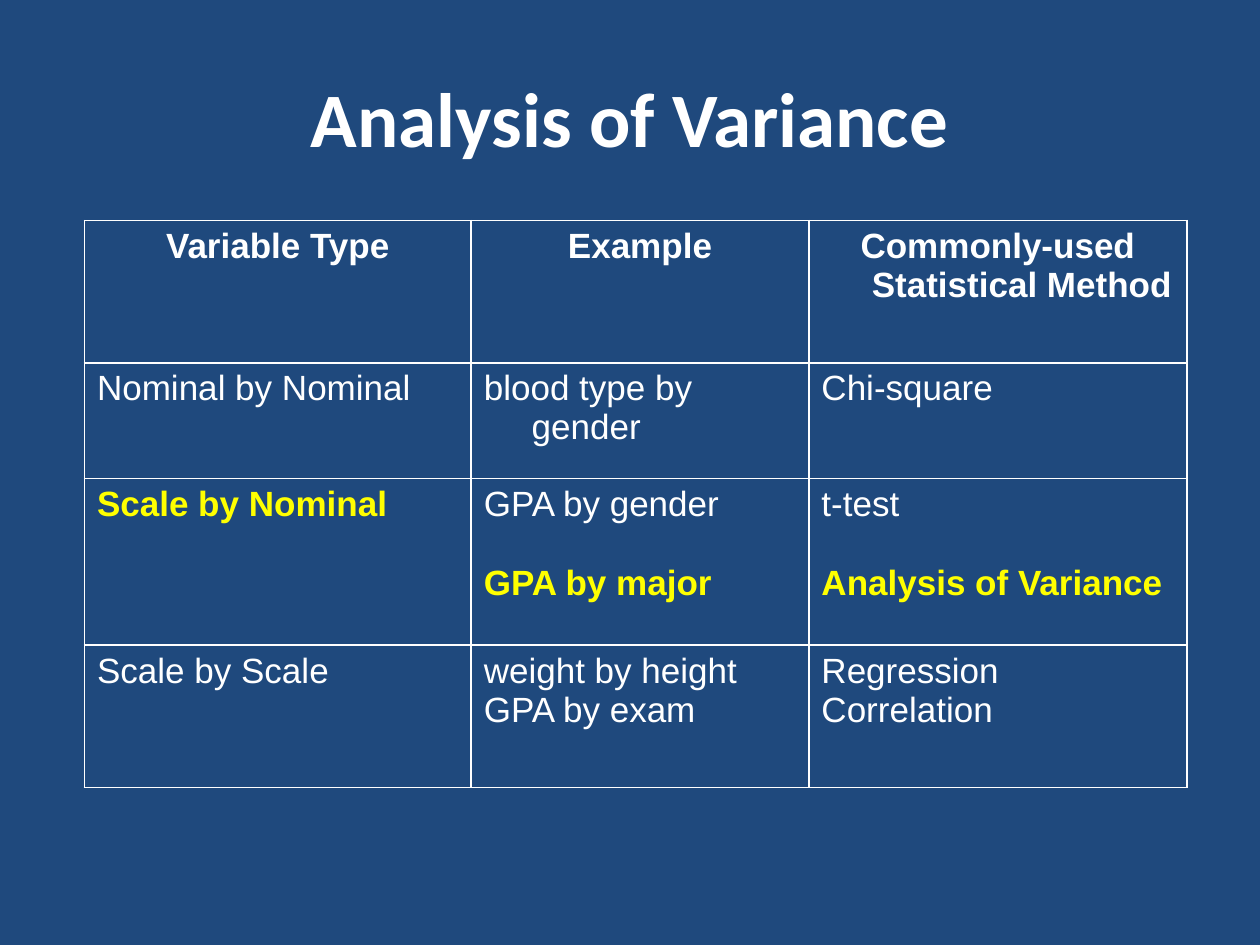
"""Build a slide that matches variable types to statistical methods."""
import dataclasses

import lxml.etree
import pptx
import pptx.dml.color
import pptx.enum.text
import pptx.oxml.ns
import pptx.util

WIDE, HIGH = 10, 7.5
WHITE, GOLD, NAVY = "FFFFFF", "FFFF00", "1F497D"
COLS = (3.07, 2.68, 3)
ROWS = (1.13, 0.92, 1.32, 1.13)
ALIGN = pptx.enum.text.PP_ALIGN


@dataclasses.dataclass
class Line:
    """One paragraph of a table cell."""
    text: str
    hot: bool = False
    gap: float = 0


GRID = (
    ((Line("Variable Type"),), (Line("Example"),),
     (Line("Commonly-used Statistical Method"),)),
    ((Line("Nominal by Nominal"),), (Line("blood type by gender"),),
     (Line("Chi-square"),)),
    ((Line("Scale by Nominal", hot=True),),
     (Line("GPA by gender"), Line("GPA by major", hot=True, gap=22.5)),
     (Line("t-test"), Line("Analysis of Variance", hot=True, gap=22.5))),
    ((Line("Scale by Scale"),),
     (Line("weight by height"), Line("GPA by exam")),
     (Line("Regression"), Line("Correlation"))),
)


def tint(code: str) -> pptx.dml.color.RGBColor:
    """Turn a hex string into a colour."""
    return pptx.dml.color.RGBColor.from_string(code)


def write(para, text: str, *, size: float = 20, font: str = "Arial",
          color: str = WHITE, bold: bool = False, align=ALIGN.LEFT,
          gap: float = 0, hang: float = 0) -> None:
    """Put formatted text in a paragraph."""
    run = para.add_run()
    run.text = text
    run.font.size = pptx.util.Pt(size)
    run.font.name = font
    run.font.bold = bold
    run.font.color.rgb = tint(color)
    para.alignment = align
    para.space_before = pptx.util.Pt(gap)
    props = para._p.get_or_add_pPr()
    props.set("marL", str(pptx.util.Inches(hang)))
    props.set("indent", str(-pptx.util.Inches(hang)))


def edge(cell, color: str, width: float) -> None:
    """Draw a line on all four sides of a cell."""
    name = pptx.oxml.ns.qn
    props = cell._tc.get_or_add_tcPr()
    for spot, side in enumerate(("lnL", "lnR", "lnT", "lnB")):
        line = lxml.etree.Element(name(f"a:{side}"), w=str(pptx.util.Pt(width)))
        fill = lxml.etree.SubElement(line, name("a:solidFill"))
        lxml.etree.SubElement(fill, name("a:srgbClr"), val=color)
        props.insert(spot, line)


def fill_cell(cell, lines: tuple[Line, ...], head: bool) -> None:
    """Write the lines of one cell and style it."""
    cell.fill.background()
    edge(cell, WHITE, 1)
    frame = cell.text_frame
    for spot, line in enumerate(lines):
        para = frame.add_paragraph() if spot else frame.paragraphs[0]
        write(para, line.text, color=GOLD if line.hot else WHITE,
              bold=head or line.hot, gap=line.gap, hang=0.38,
              align=ALIGN.CENTER if head else ALIGN.LEFT)


def add_grid(slide) -> None:
    """Add the table of variable types."""
    inch = pptx.util.Inches
    table = slide.shapes.add_table(
        len(ROWS), len(COLS), inch(0.67), inch(1.75),
        inch(sum(COLS)), inch(sum(ROWS))).table
    table.horz_banding = False
    for col, width in zip(table.columns, COLS):
        col.width = inch(width)
    for row, height in zip(table.rows, ROWS):
        row.height = inch(height)
    for down, row in enumerate(GRID):
        for over, lines in enumerate(row):
            fill_cell(table.cell(down, over), lines, head=down == 0)


def add_title(slide, text: str) -> None:
    """Add the centred title."""
    inch = pptx.util.Inches
    box = slide.shapes.add_textbox(inch(0.05 * WIDE), inch(0.04 * HIGH),
                                   inch(0.9 * WIDE), inch(HIGH / 6))
    frame = box.text_frame
    frame.word_wrap = True
    frame.vertical_anchor = pptx.enum.text.MSO_ANCHOR.MIDDLE
    write(frame.paragraphs[0], text, size=44, font="Calibri", bold=True,
          align=ALIGN.CENTER)


def main() -> None:
    """Build and save the slide."""
    deck = pptx.Presentation()
    deck.slide_width = pptx.util.Inches(WIDE)
    deck.slide_height = pptx.util.Inches(HIGH)
    slide = deck.slides.add_slide(deck.slide_layouts[6])
    back = slide.background.fill
    back.solid()
    back.fore_color.rgb = tint(NAVY)
    add_grid(slide)
    add_title(slide, "Analysis of Variance")
    deck.save("out.pptx")


if __name__ == "__main__":
    main()
